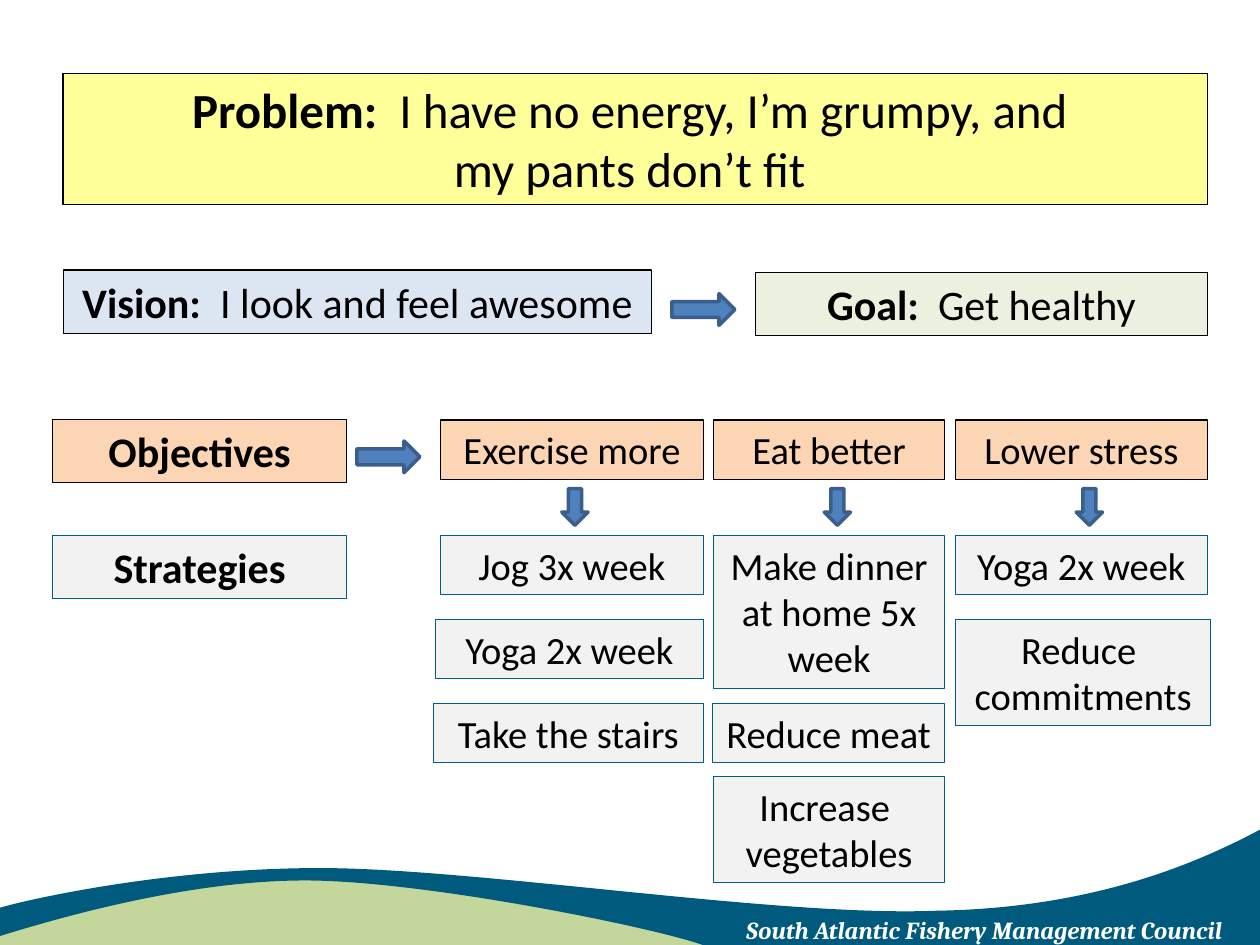
from lxml import etree
from pptx import Presentation
from pptx.dml.color import RGBColor
from pptx.enum.shapes import MSO_SHAPE
from pptx.enum.text import MSO_ANCHOR, MSO_AUTO_SIZE, PP_ALIGN
from pptx.oxml.ns import qn
from pptx.util import Cm, Pt

RECTANGLE, ARROW = MSO_SHAPE.RECTANGLE, MSO_SHAPE.RIGHT_ARROW
TOP, NO_FIT = MSO_ANCHOR.TOP, MSO_AUTO_SIZE.NONE
LEFT, CENTER = PP_ALIGN.LEFT, PP_ALIGN.CENTER

COLORS = {
    "black": "000000", "white": "FFFFFF", "yellow": "FFFF99", "blue": "DCE6F2",
    "green": "EBF1DE", "orange": "FCD5B5", "gray": "F2F2F2", "teal": "005D82",
    "arrow": "4F81BD", "arrow line": "3A5F8C",
    "wave": "005A7E", "hill": "C3D69B",
}

# Content: paragraphs are lists of (text, bold) spans; lengths in cm
PROBLEM = [[("Problem:  ", True), ("I have no energy, I’m grumpy, and ", False)],
           [("my pants don’t fit ", False)]]
VISION = [[("Vision:  ", True), ("I look and feel awesome", False)]]
GOAL = [[("Goal:  ", True), ("Get healthy", False)]]
FOOTER = [[("South Atlantic Fishery Management Council", True)]]

ROW_TOPS = [10.8, 12.49, 14.18, 15.66]
OBJECTIVE_TOP = 8.47
# Strategies: (row, left edge, width, lines of text, paragraphs)
COLUMNS = [
    {"objective": "Exercise more", "left": 8.88, "width": 5.3, "arrow": 11.59,
     "strategies": [(0, 8.88, 5.3, 1, ["Jog 3x week"]),
                    (1, 8.78, 5.4, 1, ["Yoga 2x week"]),
                    (2, 8.74, 5.44, 1, ["Take the stairs"])]},
    {"objective": "Eat better", "left": 14.39, "width": 4.65, "arrow": 16.88,
     "strategies": [(0, 14.39, 4.65, 3, ["Make dinner at home 5x week"]),
                    (2, 14.37, 4.67, 1, ["Reduce meat"]),
                    (3, 14.39, 4.65, 2, ["Increase ", "vegetables"])]},
    {"objective": "Lower stress", "left": 19.26, "width": 5.08, "arrow": 21.96,
     "strategies": [(0, 19.26, 5.08, 1, ["Yoga 2x week"]),
                    (1, 19.26, 5.15, 2, ["Reduce ", "commitments"])]},
]
# Row labels: (text, top, fill, line)
LABELS = [("Objectives", 8.45, "orange", "black"),
          ("Strategies", 10.79, "gray", "teal")]

# Waves: two numbers draw a line, six a curve
HILL = [(14.4, 19.07), (13.56, 18.82, 8.79, 17.73, 6.4, 17.65),
        (3.99, 17.58, 1.07, 18.36, 0, 18.62), (0, 19.05)]
WAVE = [(25.4, 19.07), (14.22, 19.07), (13.31, 18.72, 8.56, 17.75, 6.15, 17.75),
        (3.73, 17.75, 1.07, 18.54, 0, 18.87), (-0.03, 18.31),
        (0.43, 18.16, 3.3, 17.5, 6.45, 17.5),
        (9.6, 17.5, 15.7, 18.49, 18.87, 18.36),
        (22.12, 18.31, 24.23, 17.35, 25.43, 16.71)]


def color(name):
    return RGBColor.from_string(COLORS[name])


def paint(shape, fill, line=None, width=0.75):
    shape.fill.solid()
    shape.fill.fore_color.rgb = color(fill)
    if line:
        shape.line.color.rgb = color(line)
        shape.line.width = Pt(width)
    else:
        shape.line.fill.background()


def write(shape, paragraphs, size=22, font="Calibri", ink="black",
          italic=False, align=CENTER, wrap=True):
    frame = shape.text_frame
    frame.auto_size = NO_FIT
    frame.word_wrap = wrap
    frame.vertical_anchor = TOP
    for index, spans in enumerate(paragraphs):
        para = frame.add_paragraph() if index else frame.paragraphs[0]
        para.alignment = align
        for text, bold in spans:
            span = para.add_run()
            span.text = text
            span.font.name, span.font.size = font, Pt(size)
            span.font.bold, span.font.italic = bold, italic
            span.font.color.rgb = color(ink)


def box_height(lines, size):
    """Height in cm of a box that fits its lines of text."""
    return 0.25 + lines * size * 0.0428


def add_box(left, top, width, paragraphs, fill, line="black", size=22, lines=1):
    box = page.shapes.add_shape(RECTANGLE, Cm(left), Cm(top), Cm(width),
                                Cm(box_height(lines, size)))
    box.shadow.inherit = False
    paint(box, fill, line)
    write(box, paragraphs, size=size)


def add_arrow(center_x, center_y, width, height, rotation=0):
    arrow = page.shapes.add_shape(ARROW, Cm(center_x - width / 2),
                                  Cm(center_y - height / 2), Cm(width), Cm(height))
    arrow.rotation = rotation
    arrow.shadow.inherit = False
    paint(arrow, "arrow", "arrow line", 2)


def add_wave(segments, fill):
    points = [(Cm(x), Cm(y)) for segment in segments
              for x, y in zip(segment[::2], segment[1::2])]
    builder = page.shapes.build_freeform(*points[0])
    builder.add_line_segments(points[1:], close=True)
    wave = builder.convert_to_shape()
    wave.shadow.inherit = False
    paint(wave, fill)
    # Join the three lines of each six-number segment into one curve
    lines = iter(list(wave.element.iter(qn("a:lnTo"))))
    for segment in segments[1:]:
        first = next(lines)
        if len(segment) == 6:
            curve = etree.Element(qn("a:cubicBezTo"))
            first.addprevious(curve)
            for line in (first, next(lines), next(lines)):
                curve.append(line[0])
                line.getparent().remove(line)


deck = Presentation()
deck.slide_width, deck.slide_height = Cm(25.4), Cm(19.05)
page = deck.slides.add_slide(deck.slide_layouts[5])

# Waves and footer
add_wave(HILL, "hill")
add_wave(WAVE, "wave")
footer = page.shapes.add_textbox(Cm(14.79), Cm(18.32), Cm(10.54), Cm(0.86))
write(footer, FOOTER, size=14, font="Cambria", ink="white", italic=True,
      align=LEFT, wrap=False)

# Problem, vision and goal
title = page.shapes.title
title.left, title.top = Cm(1.27), Cm(1.48)
title.width, title.height = Cm(23.07), Cm(box_height(2, 28))
paint(title, "yellow", "black")
write(title, PROBLEM, size=28)
add_box(1.28, 5.44, 11.85, VISION, "blue", size=24)
add_box(15.23, 5.49, 9.11, GOAL, "green", size=24)
add_arrow(14.18, 6.24, 1.27, 0.64)

# Row labels
for text, top, fill, line in LABELS:
    add_box(1.06, top, 5.93, [[(text, True)]], fill, line, size=24)
add_arrow(7.83, 9.21, 1.27, 0.64)

# Objectives with their strategies
for column in COLUMNS:
    add_box(column["left"], OBJECTIVE_TOP, column["width"],
            [[(column["objective"], False)]], "orange")
    add_arrow(column["arrow"], 10.22, 0.74, 0.53, rotation=90)
    for row, left, width, lines, texts in column["strategies"]:
        add_box(left, ROW_TOPS[row], width, [[(text, False)] for text in texts],
                "gray", "teal", lines=lines)

deck.save("out.pptx")
